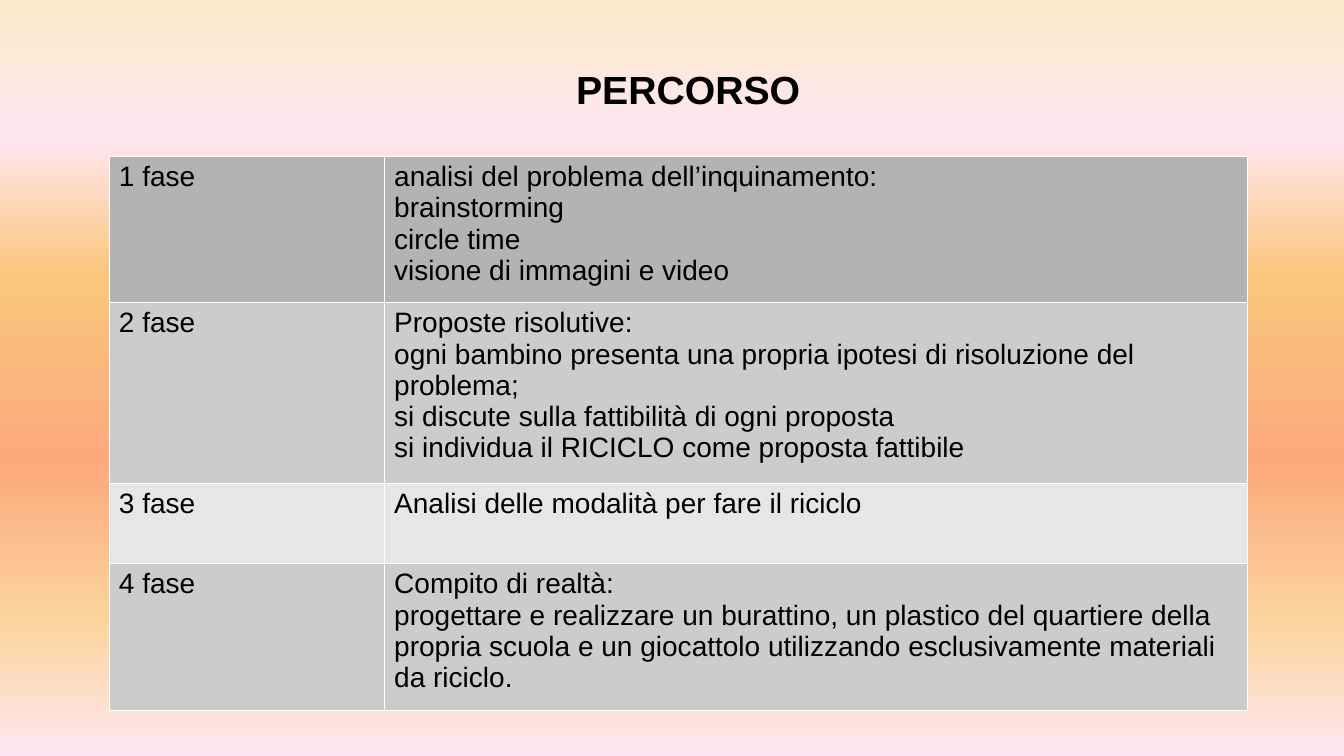
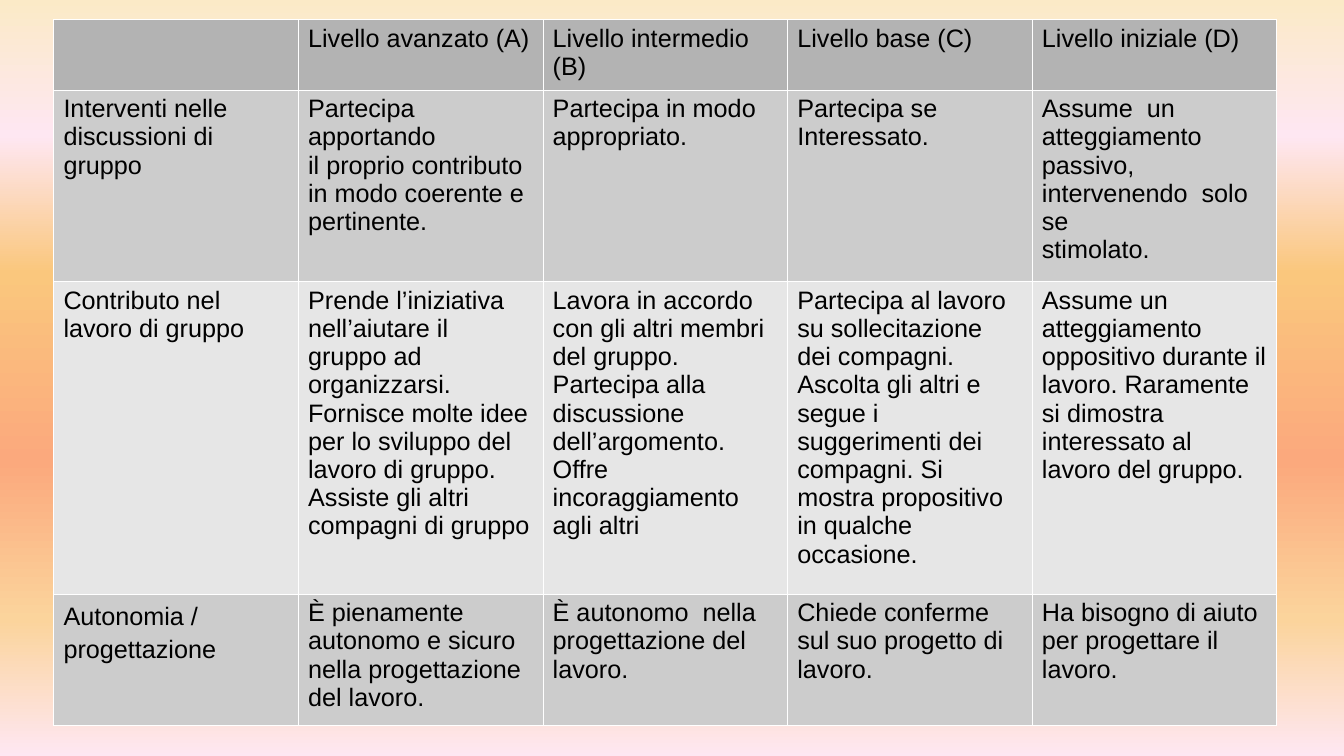
import pptx
import pptx.dml.color
import pptx.enum.text
import pptx.oxml
import pptx.oxml.ns
import pptx.util

Inches = pptx.util.Inches
RGBColor = pptx.dml.color.RGBColor

FONT = "Arial"
BLACK = RGBColor(0x00, 0x00, 0x00)
WHITE = RGBColor(0xFF, 0xFF, 0xFF)
DARK_GREY = RGBColor(0xB3, 0xB3, 0xB3)
MID_GREY = RGBColor(0xCC, 0xCC, 0xCC)
LIGHT_GREY = RGBColor(0xE6, 0xE6, 0xE6)
CREAM = RGBColor(0xFB, 0xEA, 0xC7)
PINK = RGBColor(0xFE, 0xE7, 0xF2)
AMBER = RGBColor(0xFA, 0xC7, 0x7D)
SALMON = RGBColor(0xFB, 0xA9, 0x7D)
SAND = RGBColor(0xFB, 0xD4, 0x9C)
SUNSET = [(0, CREAM), (18, PINK), (36, AMBER), (61, SALMON), (82, SAND), (100, PINK)]
BORDER_WIDTH = pptx.util.Pt(0.06)

PHASES = [
    ["1 fase", "analisi del problema dell’inquinamento:\nbrainstorming\ncircle time\n"
     "visione di immagini e video"],
    ["2 fase", "Proposte risolutive:\n"
     "ogni bambino presenta una propria ipotesi di risoluzione del problema;\n"
     "si discute sulla fattibilità di ogni proposta\n"
     "si individua il RICICLO come proposta fattibile"],
    ["3 fase", "Analisi delle modalità per fare il riciclo"],
    ["4 fase", "Compito di realtà:\n"
     "progettare e realizzare un burattino, un plastico del quartiere della propria scuola "
     "e un giocattolo utilizzando esclusivamente materiali da riciclo."],
]

RUBRIC = [
    ["", "Livello avanzato (A)", "Livello intermedio (B)", "Livello base (C)",
     "Livello iniziale (D)"],
    ["Interventi nelle discussioni di gruppo",
     "Partecipa apportando\nil proprio contributo in modo coerente e pertinente.",
     "Partecipa in modo appropriato.",
     "Partecipa se\nInteressato.",
     "Assume  un\natteggiamento passivo,\nintervenendo  solo  se\nstimolato."],
    ["Contributo nel lavoro di gruppo",
     "Prende l’iniziativa nell’aiutare il gruppo ad organizzarsi. Fornisce molte idee per lo "
     "sviluppo del lavoro di gruppo. Assiste gli altri compagni di gruppo",
     "Lavora in accordo con gli altri membri del gruppo. Partecipa alla discussione "
     "dell’argomento. Offre incoraggiamento agli altri",
     "Partecipa al lavoro su sollecitazione dei compagni.\nAscolta gli altri e segue i "
     "suggerimenti dei compagni. Si mostra propositivo in qualche occasione.",
     "Assume un atteggiamento oppositivo durante il lavoro. Raramente si dimostra interessato "
     "al lavoro del gruppo."],
    ["Autonomia / progettazione",
     "È pienamente autonomo e sicuro nella progettazione del lavoro.",
     "È autonomo  nella progettazione del lavoro.",
     "Chiede conferme sul suo progetto di lavoro.",
     "Ha bisogno di aiuto per progettare il lavoro."],
]


def solid_fill_xml(color):
    return f'<a:solidFill><a:srgbClr val="{color}"/></a:solidFill>'


def add_xml(parent, tag, attributes, content):
    namespace = pptx.oxml.ns.nsdecls("a")
    parent.append(pptx.oxml.parse_xml(
        f"<a:{tag} {namespace} {attributes}>{content}</a:{tag}>"))


def write(frame, text, size=18, bold=False, align=None, spacing=None):
    """Fill a text frame; each line of text becomes a paragraph."""
    frame.word_wrap = True
    frame.text = text
    for para in frame.paragraphs:
        para.alignment = align
        para.line_spacing = spacing
        para.font.size = pptx.util.Pt(size)
        for span in para.runs:
            span.font.name = FONT
            span.font.size = pptx.util.Pt(size)
            span.font.bold = bold
            span.font.color.rgb = BLACK


class Deck:
    def __init__(self):
        self.deck = pptx.Presentation()
        self.deck.slide_width = Inches(13.33)
        self.deck.slide_height = Inches(7.5)
        self.page = None
        self.paint_background()

    def paint_background(self):
        """Give the master the gradient that every slide inherits."""
        master = self.deck.slide_master
        fill = master.background.fill
        fill.gradient()
        fill.gradient_angle = 270
        stops = master.element.xpath("./p:cSld/p:bg//a:gsLst")[0]
        for stop in list(stops):
            stops.remove(stop)
        for percent, color in SUNSET:
            add_xml(stops, "gs", f'pos="{percent * 1000}"', f'<a:srgbClr val="{color}"/>')

    def add_page(self):
        self.page = self.deck.slides.add_slide(self.deck.slide_layouts[6])

    def add_title(self, text, left, top, width, height):
        box = self.page.shapes.add_textbox(
            Inches(left), Inches(top), Inches(width), Inches(height))
        write(box.text_frame, text, size=28, bold=True,
              align=pptx.enum.text.PP_ALIGN.CENTER)

    def add_table(self, rows, left, top, widths, heights, size):
        """Dark first row, then mid and light grey rows in turn."""
        table = self.page.shapes.add_table(
            len(rows), len(widths), Inches(left), Inches(top),
            Inches(sum(widths)), Inches(sum(heights))).table
        table.first_row = False
        table.horz_banding = False
        for column, width in zip(table.columns, widths):
            column.width = Inches(width)
        for index, (row, height, texts) in enumerate(zip(table.rows, heights, rows)):
            row.height = Inches(height)
            if index == 0:
                color = DARK_GREY
            else:
                color = MID_GREY if index % 2 else LIGHT_GREY
            for cell, text in zip(row.cells, texts):
                self.style_cell(cell, color)
                write(cell.text_frame, text, size=size)
        return table

    def style_cell(self, cell, color):
        properties = cell._tc.get_or_add_tcPr()
        for side in "LRTB":
            add_xml(properties, f"ln{side}", f'w="{BORDER_WIDTH}"', solid_fill_xml(WHITE))
        cell.fill.solid()
        cell.fill.fore_color.rgb = color


def main():
    deck = Deck()

    deck.add_page()
    deck.add_table(PHASES, 1.08, 1.55, [2.73, 8.56], [1.45, 1.79, 0.8, 1.45], size=20)
    deck.add_title("PERCORSO", 4.54, 0.6, 4.57, 0.79)

    deck.add_page()
    rubric = deck.add_table(RUBRIC, 0.53, 0.19, [12.13 / 5] * 5,
                            [0.69, 1.89, 3.08, 1.29], size=18)
    write(rubric.cell(3, 0).text_frame, RUBRIC[3][0], spacing=1.15)

    deck.deck.save("out.pptx")


if __name__ == "__main__":
    main()
